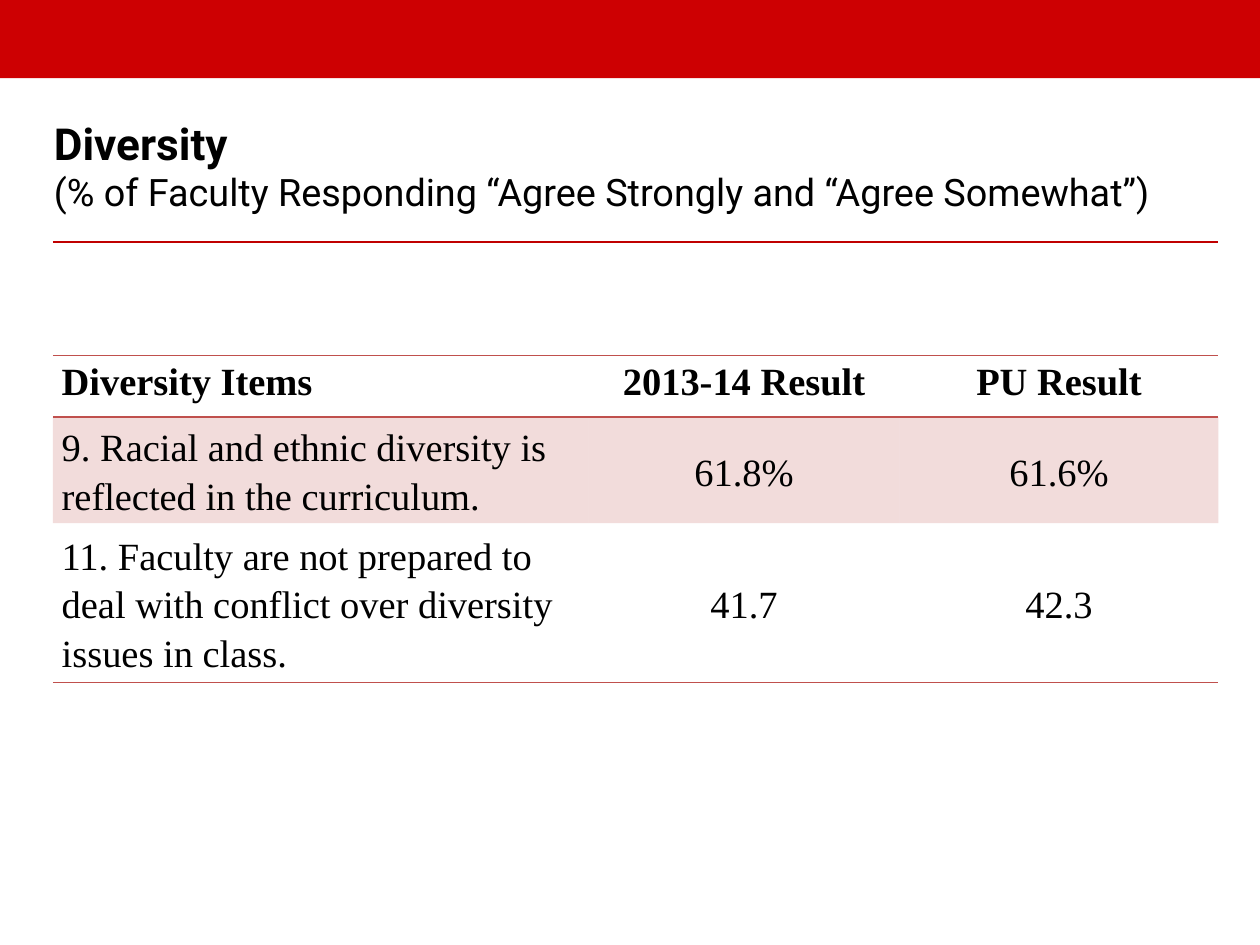
from lxml import etree
from pptx import Presentation
from pptx.dml.color import RGBColor
from pptx.enum.shapes import MSO_CONNECTOR, MSO_SHAPE
from pptx.enum.text import MSO_ANCHOR, PP_ALIGN
from pptx.oxml.ns import qn
from pptx.util import Inches, Pt

RECTANGLE = MSO_SHAPE.RECTANGLE
STRAIGHT = MSO_CONNECTOR.STRAIGHT
TOP, MIDDLE = MSO_ANCHOR.TOP, MSO_ANCHOR.MIDDLE
LEFT, CENTER = PP_ALIGN.LEFT, PP_ALIGN.CENTER

BANNER_RED = RGBColor(0xCD, 0x00, 0x02)
RULE_RED = RGBColor(0xC0, 0x00, 0x00)
TABLE_RED = RGBColor(0xC0, 0x50, 0x4D)
BLACK = RGBColor(0x00, 0x00, 0x00)

RESULTS = [
    ("Diversity Items", "2013-14 Result", "PU Result"),
    ("9. Racial and ethnic diversity is reflected in the curriculum.", "61.8%", "61.6%"),
    ("11. Faculty are not prepared to deal with conflict over diversity issues in class.",
     "41.7", "42.3"),
]
COLUMN_WIDTHS = [4.25, 2.47, 2.53]
ROW_HEIGHTS = [0.49, 0.76, 0.75]


class SlideBuilder:
    title_font = "Roboto"
    table_font = "Times New Roman"

    def __init__(self, slide):
        self.slide = slide

    def style(self, font, name, size, bold):
        font.name = name
        font.size = Pt(size)
        font.bold = bold
        font.color.rgb = BLACK

    def banner(self, left, top, width, height):
        band = self.slide.shapes.add_shape(
            RECTANGLE, Inches(left), Inches(top), Inches(width), Inches(height))
        band.shadow.inherit = False
        band.fill.solid()
        band.fill.fore_color.rgb = BANNER_RED
        band.line.fill.background()

    def title(self, left, top, width, height, heading, subtitle):
        box = self.slide.shapes.add_textbox(
            Inches(left), Inches(top), Inches(width), Inches(height))
        frame = box.text_frame
        frame.word_wrap = True
        frame.vertical_anchor = MIDDLE
        paragraph = frame.paragraphs[0]
        paragraph.text = f"{heading}\v{subtitle}"
        heading_run, subtitle_run = paragraph.runs
        self.style(heading_run.font, self.title_font, 25.2, True)
        self.style(subtitle_run.font, self.title_font, 21.6, False)

    def rule(self, left, top, width):
        rule = self.slide.shapes.add_connector(
            STRAIGHT, Inches(left), Inches(top), Inches(left + width), Inches(top))
        rule.line.color.rgb = RULE_RED
        rule.line.width = Pt(0.75)
        etree.SubElement(rule.element.spPr, qn("a:effectLst"))

    def border(self, cell, side, visible):
        properties = cell._tc.get_or_add_tcPr()
        edge = etree.Element(qn(f"a:{side}"), w=str(Pt(1)))
        if visible:
            fill = etree.SubElement(edge, qn("a:solidFill"))
            etree.SubElement(fill, qn("a:srgbClr"), val=str(TABLE_RED))
        else:
            etree.SubElement(edge, qn("a:noFill"))
        properties.append(edge)

    def cell(self, cell, text, row, column):
        header = row == 0
        cell.margin_left = cell.margin_right = Inches(0.07)
        cell.margin_top = cell.margin_bottom = 0
        cell.vertical_anchor = TOP if header else MIDDLE
        cell.text_frame.text = text
        paragraph = cell.text_frame.paragraphs[0]
        paragraph.alignment = CENTER if column else LEFT
        paragraph.line_spacing = 1.15
        self.style(paragraph.runs[0].font, self.table_font, 22, header)
        for side in ("lnL", "lnR"):
            self.border(cell, side, False)
        self.border(cell, "lnT", row < 2)
        self.border(cell, "lnB", row != 1)
        if row == 1:
            cell.fill.solid()
            cell.fill.fore_color.rgb = TABLE_RED
            tint = cell._tc.tcPr.find(f"{qn('a:solidFill')}/{qn('a:srgbClr')}")
            etree.SubElement(tint, qn("a:alpha"), val="20000")
        else:
            cell.fill.background()

    def table(self, left, top, rows, widths, heights):
        table = self.slide.shapes.add_table(
            len(rows), len(widths), Inches(left), Inches(top),
            Inches(sum(widths)), Inches(sum(heights))).table
        table.horz_banding = False
        for column, width in zip(table.columns, widths):
            column.width = Inches(width)
        for table_row, height in zip(table.rows, heights):
            table_row.height = Inches(height)
        for row, texts in enumerate(rows):
            for column, text in enumerate(texts):
                self.cell(table.cell(row, column), text, row, column)


def main():
    presentation = Presentation()
    presentation.slide_width = Inches(10)
    presentation.slide_height = Inches(7.5)
    builder = SlideBuilder(presentation.slides.add_slide(presentation.slide_layouts[6]))
    builder.banner(0, 0, 10, 0.62)
    builder.title(0.33, 0.87, 9.83, 0.88, "Diversity",
                  "(% of Faculty Responding “Agree Strongly and “Agree Somewhat”)")
    builder.rule(0.42, 1.92, 9.25)
    builder.table(0.42, 2.82, RESULTS, COLUMN_WIDTHS, ROW_HEIGHTS)
    presentation.save("out.pptx")


if __name__ == "__main__":
    main()
